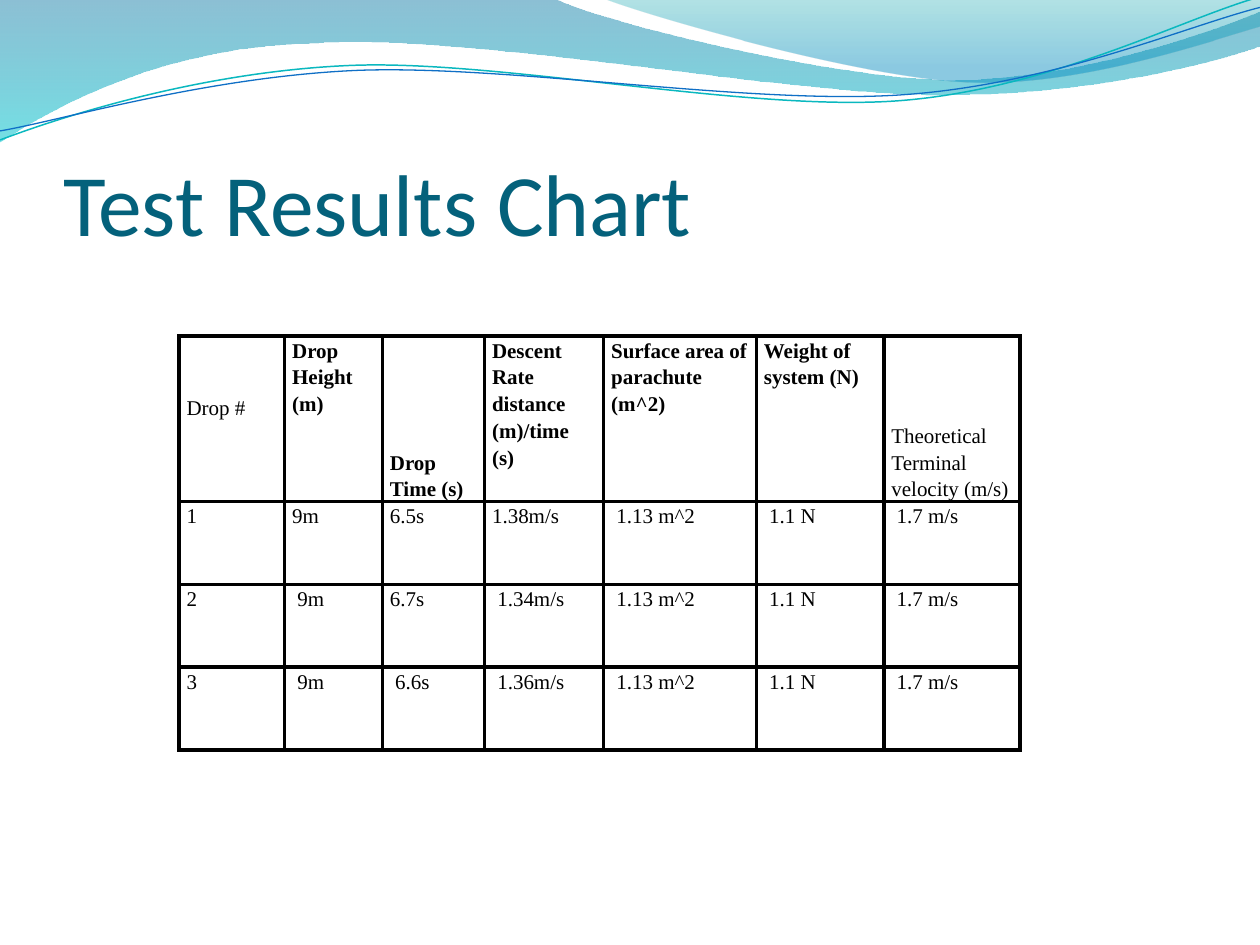
"""Build the test results slide: a wave banner, a title and a table of drops."""
import math

from lxml import etree
from pptx import Presentation
from pptx import util as u
from pptx.dml import color
from pptx.enum import text
from pptx.oxml import ns

TITLE = "Test Results Chart"
TOP, MID, BOTTOM = text.MSO_ANCHOR.TOP, text.MSO_ANCHOR.MIDDLE, text.MSO_ANCHOR.BOTTOM
HEADERS = [
    ("Drop #", False, MID),
    ("Drop Height (m)", True, TOP),
    ("Drop Time (s)", True, BOTTOM),
    ("Descent Rate\ndistance (m)/time (s)", True, TOP),
    ("Surface area of parachute (m^2)", True, TOP),
    ("Weight of system (N)", True, TOP),
    ("Theoretical Terminal velocity (m/s)", False, BOTTOM),
]
SHARED = [" 1.13 m^2", " 1.1 N", " 1.7 m/s"]
DROPS = [
    ["1", "9m", "6.5s", "1.38m/s"],
    ["2", " 9m", "6.7s", " 1.34m/s"],
    ["3", " 9m", " 6.6s", " 1.36m/s"],
]
COL_WIDTHS = [2.13, 1.97, 2.06, 2.4, 3.08, 2.57, 2.74]
ROW_HEIGHTS = [3.34] + [1.67] * len(DROPS)
TILT = -2.7
WAVES = [
    {"start": (-0.03, 2.87),
     "segments": [(0, 0),
                  (11.18, -0.03),
                  (12.09, 0.43, 16.87, 1.6, 19.25, 1.6),
                  (21.67, 1.6, 24.33, 0.66, 25.4, 0.23),
                  (25.43, 0.91),
                  (24.97, 1.12, 22.1, 1.93, 18.95, 1.91),
                  (15.8, 1.91, 9.7, 0.71, 6.53, 0.86),
                  (3.28, 0.91, 1.17, 2.11, -0.03, 2.87)],
     "stops": [(0, "0074A1", 45), (1, "00C6CF", 55)]},
    {"start": (12.17, -0.03),
     "segments": [(12.93, 0.28, 17.32, 1.57, 19.53, 1.65),
                  (21.74, 1.75, 24.41, 0.81, 25.4, 0.53),
                  (25.4, 0),
                  (12.17, -0.03)],
     "stops": [(0, "00A1A9", 30), (0.8, "008BBF", 45)]},
    {"start": (0, 2.82),
     "segments": [(1.22, 2.36, 4.01, 1.45, 7.04, 1.32),
                  (10.03, 1.19, 15.06, 2.26, 18.11, 2.03),
                  (21.16, 1.8, 23.83, 0.38, 25.35, -0.05)],
     "line": ("0AB8BF", 0.85), "pivot": (12.67, 1.46)},
    {"start": (0, 2.64),
     "segments": [(1.19, 2.44, 4.17, 1.55, 7.19, 1.42),
                  (10.24, 1.3, 15.16, 2.13, 18.21, 1.91),
                  (21.23, 1.7, 23.9, 0.53, 25.4, 0.15)],
     "line": ("0F6FC6", 0.75), "pivot": (12.69, 1.5)},
]


def rgb(value):
    """Turn a hex string into a colour."""
    return color.RGBColor.from_string(value)


def write(tf, content, size=12, font="Times New Roman", fill="000000", bold=False, spacing=1.15):
    """Write one formatted paragraph into a text frame."""
    p = tf.paragraphs[0]
    p.text = content
    p.line_spacing = spacing
    for r in p.runs:
        r.font.size = u.Pt(size)
        r.font.name = font
        r.font.bold = bold
        r.font.color.rgb = rgb(fill)


def place(coords, pivot):
    """Turn flat coordinates into points, levelled around a pivot if there is one."""
    points = list(zip(coords[::2], coords[1::2]))
    if pivot:
        cos, sin = math.cos(math.radians(-TILT)), math.sin(math.radians(-TILT))
        cx, cy = pivot
        points = [(cx + (x - cx) * cos - (y - cy) * sin,
                   cy + (x - cx) * sin + (y - cy) * cos) for x, y in points]
    return [(u.Cm(x), u.Cm(y)) for x, y in points]


def bend(s, segments):
    """Turn the straight sides that have control points into cubic curves."""
    sides = list(s._element.spPr.iter(ns.qn("a:lnTo")))
    for side, points in zip(sides, segments):
        if len(points) == 3:
            curve = etree.Element(ns.qn("a:cubicBezTo"))
            for x, y in points:
                etree.SubElement(curve, ns.qn("a:pt"), x=str(x - s.left), y=str(y - s.top))
            side.getparent().replace(side, curve)


def add_wave(slide, start, segments, stops=None, line=None, pivot=None):
    """Draw a gradient wave or an open wavy line."""
    sides = [place(seg, pivot) for seg in segments]
    builder = slide.shapes.build_freeform(*place(start, pivot)[0])
    builder.add_line_segments([points[-1] for points in sides], close=bool(stops))
    s = builder.convert_to_shape()
    bend(s, sides)
    s.shadow.inherit = False
    if line:
        s.rotation = TILT
        s.fill.background()
        s.line.color.rgb = rgb(line[0])
        s.line.width = u.Pt(line[1])
        return
    s.line.fill.background()
    s.fill.gradient()
    s.fill.gradient_angle = 270
    for stop, (position, tone, _) in zip(s.fill.gradient_stops, stops):
        stop.position = position
        stop.color.rgb = rgb(tone)
    for node, (_, _, opacity) in zip(s._element.spPr.iter(ns.qn("a:srgbClr")), stops):
        etree.SubElement(node, ns.qn("a:alpha"), val=str(opacity * 1000))


def add_borders(cell, tone="000000", width=2.25):
    """Give a cell a solid border on all four sides."""
    tc_pr = cell._tc.get_or_add_tcPr()
    for side in ("lnL", "lnR", "lnT", "lnB"):
        ln = etree.SubElement(tc_pr, ns.qn(f"a:{side}"), w=str(u.Pt(width)))
        solid = etree.SubElement(ln, ns.qn("a:solidFill"))
        etree.SubElement(solid, ns.qn("a:srgbClr"), val=tone)


def add_title(slide):
    """Place the slide title."""
    s = slide.shapes.add_textbox(u.Cm(1.28), u.Cm(1.96), u.Cm(22.86), u.Cm(3.17))
    tf = s.text_frame
    tf.word_wrap = True
    tf.vertical_anchor = BOTTOM
    tf.margin_left = tf.margin_right = tf.margin_bottom = 0
    write(tf, TITLE, size=50, font="Calibri", fill="04617B", spacing=1.0)


def add_results(slide):
    """Place the table of drop results."""
    rows = [HEADERS] + [[(value, False, TOP) for value in drop + SHARED] for drop in DROPS]
    frame = slide.shapes.add_table(len(rows), len(HEADERS), u.Cm(3.61), u.Cm(6.77),
                                   u.Cm(sum(COL_WIDTHS)), u.Cm(sum(ROW_HEIGHTS)))
    table = frame.table
    table.first_row = table.horz_banding = False
    for column, width in zip(table.columns, COL_WIDTHS):
        column.width = u.Cm(width)
    for i, (row, height) in enumerate(zip(rows, ROW_HEIGHTS)):
        table.rows[i].height = u.Cm(height)
        for j, (content, bold, anchor) in enumerate(row):
            cell = table.cell(i, j)
            cell.margin_left = cell.margin_right = u.Cm(0.15)
            cell.margin_top = 0
            cell.margin_bottom = u.Cm(0.5 if anchor == MID else 0)
            cell.vertical_anchor = anchor
            add_borders(cell)
            cell.fill.background()
            write(cell.text_frame, content, bold=bold)


def main():
    """Assemble and save the slide."""
    prs = Presentation()
    prs.slide_width, prs.slide_height = u.Cm(25.4), u.Cm(19.05)
    slide = prs.slides.add_slide(prs.slide_layouts[6])
    for wave in WAVES:
        add_wave(slide, **wave)
    add_title(slide)
    add_results(slide)
    prs.save("out.pptx")


if __name__ == "__main__":
    main()
